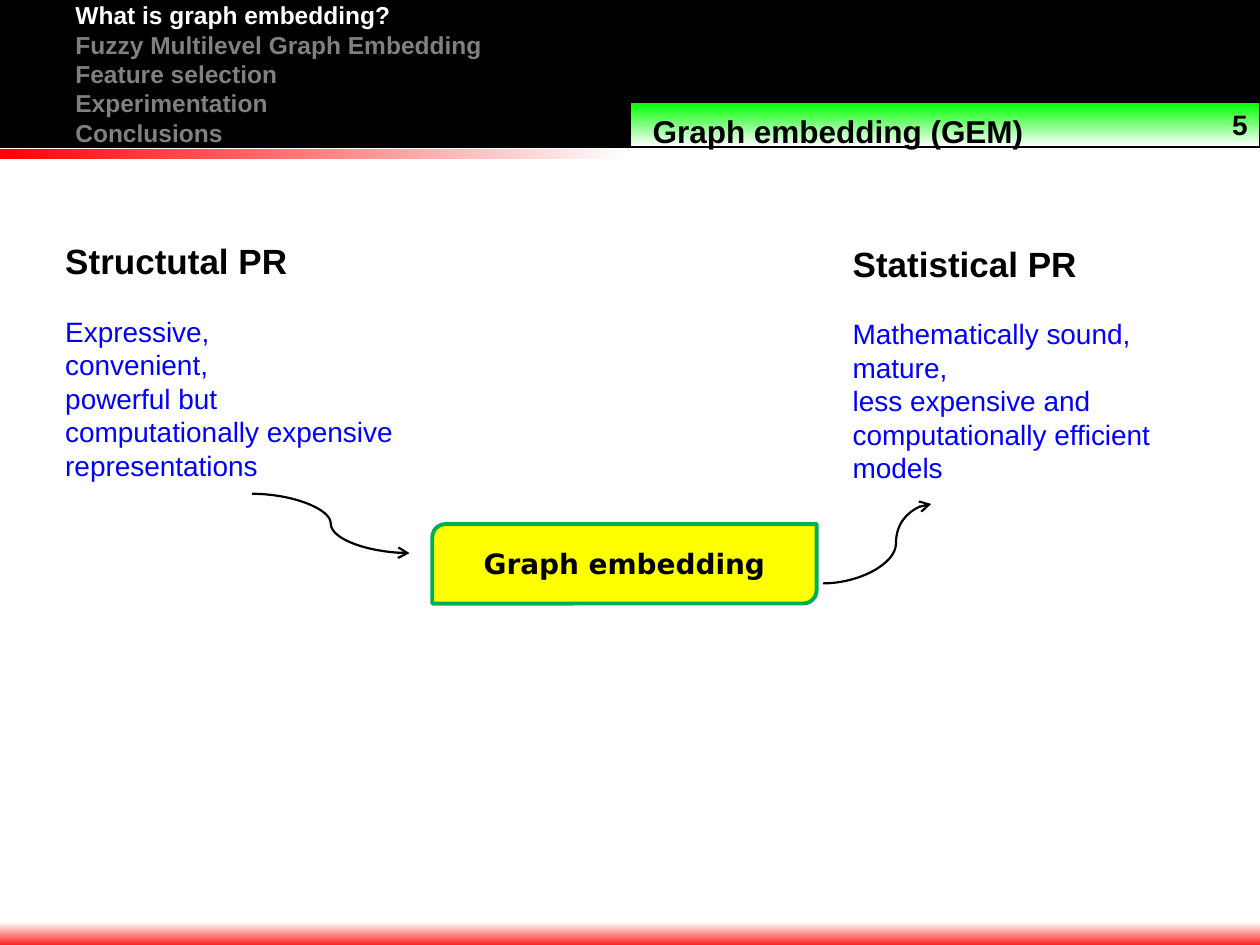
from pptx import Presentation
from pptx.dml.color import RGBColor
from pptx.enum.shapes import MSO_CONNECTOR as CONN, MSO_SHAPE as SHAPE
from pptx.enum.text import MSO_ANCHOR as ANCHOR, PP_ALIGN as ALIGN
from pptx.oxml.ns import qn
from pptx.util import Pt
from lxml.etree import SubElement

# Content
OUTLINE = ["What is graph embedding?", "Fuzzy Multilevel Graph Embedding",
           "Feature selection", "Experimentation", "Conclusions"]
CURRENT = 0
TITLE, PAGE, METHOD = "Graph embedding (GEM)", "5", "Graph embedding"
COLUMNS = [  # box, heading, lines
    ((23, 132.5, 226.8, 147.6), "Structutal PR",
     ["Expressive,", "convenient,", "powerful but",
      "computationally expensive representations"]),
    ((473, 133.9, 230.4, 147.6), "Statistical PR",
     ["Mathematically sound,", "mature,",
      "less expensive and computationally efficient models"]),
]
ARROWS = [  # from, to, position of the bend
    ((144, 282.2), (234, 316.1), 0.5),
    ((470.2, 333.4), (532.1, 288), 0.675),
]
BLACK, WHITE, RED, GREEN = "000000", "FFFFFF", "FF0000", "00FF00"

prs = Presentation()
prs.slide_width, prs.slide_height = Pt(720), Pt(540)
s = prs.slides.add_slide(prs.slide_layouts[6])


def rgb(color):
    return RGBColor.from_string(color)


def add_box(box, fill, line=None, width=0.75, kind=SHAPE.RECTANGLE, angle=0):
    """Preset shape; a pair of colours as fill makes a gradient."""
    sp = s.shapes.add_shape(kind, *map(Pt, box))
    sp.shadow.inherit = False
    if isinstance(fill, tuple):
        sp.fill.gradient()
        sp.fill.gradient_angle = angle
        for stop, color, pos in zip(sp.fill.gradient_stops, fill, (0, 1)):
            stop.color.rgb, stop.position = rgb(color), pos
    else:
        sp.fill.solid()
        sp.fill.fore_color.rgb = rgb(fill)
    if line:
        sp.line.color.rgb, sp.line.width = rgb(line), Pt(width)
    else:
        sp.line.fill.background()
    return sp


def write(sp, paragraphs, anchor=ANCHOR.MIDDLE, align=ALIGN.LEFT, indent=0,
          font="Arial"):
    """Each paragraph is (text, size, colour, bold, space after)."""
    tf = sp.text_frame
    tf.word_wrap, tf.vertical_anchor = True, anchor
    for i, (text, size, color, bold, after) in enumerate(paragraphs):
        p = tf.add_paragraph() if i else tf.paragraphs[0]
        p.alignment, p.space_after = align, Pt(after)
        p._p.get_or_add_pPr().set("marL", str(Pt(indent)))
        r = p.add_run()
        r.text = text
        r.font.name, r.font.size, r.font.bold = font, Pt(size), bold
        r.font.color.rgb = rgb(color)
    return tf


# Header with the outline
header = add_box((0, 0, 720, 84.2), BLACK, BLACK)
tf = write(header, [(text, 14, WHITE if i == CURRENT else "808080", True, 0)
                    for i, text in enumerate(OUTLINE)], indent=36)
tf.margin_top = tf.margin_bottom = 0

# Red bars at the foot and under the header
add_box((0, 527, 720, 15), (WHITE, RED), angle=270)
add_box((0, 85, 360, 5.8), (RED, WHITE))

# Title bar with the page number
bar = add_box((360, 58.6, 360, 25.2), (GREEN, WHITE), BLACK, angle=270)
write(bar, [(PAGE, 16, BLACK, True, 0)], align=ALIGN.RIGHT)
title = s.shapes.add_textbox(*map(Pt, (365.8, 58.3, 327.6, 28.8)))
write(title, [(TITLE, 18, BLACK, True, 0)], ANCHOR.TOP).margin_top = Pt(5.5)

# The two approaches
for box, heading, lines in COLUMNS:
    write(s.shapes.add_textbox(*map(Pt, box)),
          [(heading, 20, BLACK, True, 18.4)]
          + [(line, 16, "0000FF", False, 0) for line in lines], indent=7.2)

# The method that joins them
method = add_box((247, 299.5, 219.6, 45.4), "FFFF00", "00B050", 2.25,
                 SHAPE.ROUND_2_DIAG_RECTANGLE)
write(method, [(METHOD, 16, BLACK, True, 0)], align=ALIGN.CENTER,
      font="DejaVu Sans")

# Curved arrows
for start, end, bend in ARROWS:
    c = s.shapes.add_connector(CONN.CURVE, *map(Pt, start + end))
    c.line.color.rgb, c.line.width = rgb(BLACK), Pt(1.25)
    SubElement(c.line._get_or_add_ln(), qn("a:tailEnd"), type="arrow")
    sppr = c._element.spPr
    SubElement(sppr, qn("a:effectLst"))
    SubElement(sppr.find(".//" + qn("a:avLst")), qn("a:gd"), name="adj1",
               fmla=f"val {round(bend * 100000)}")

prs.save("out.pptx")
